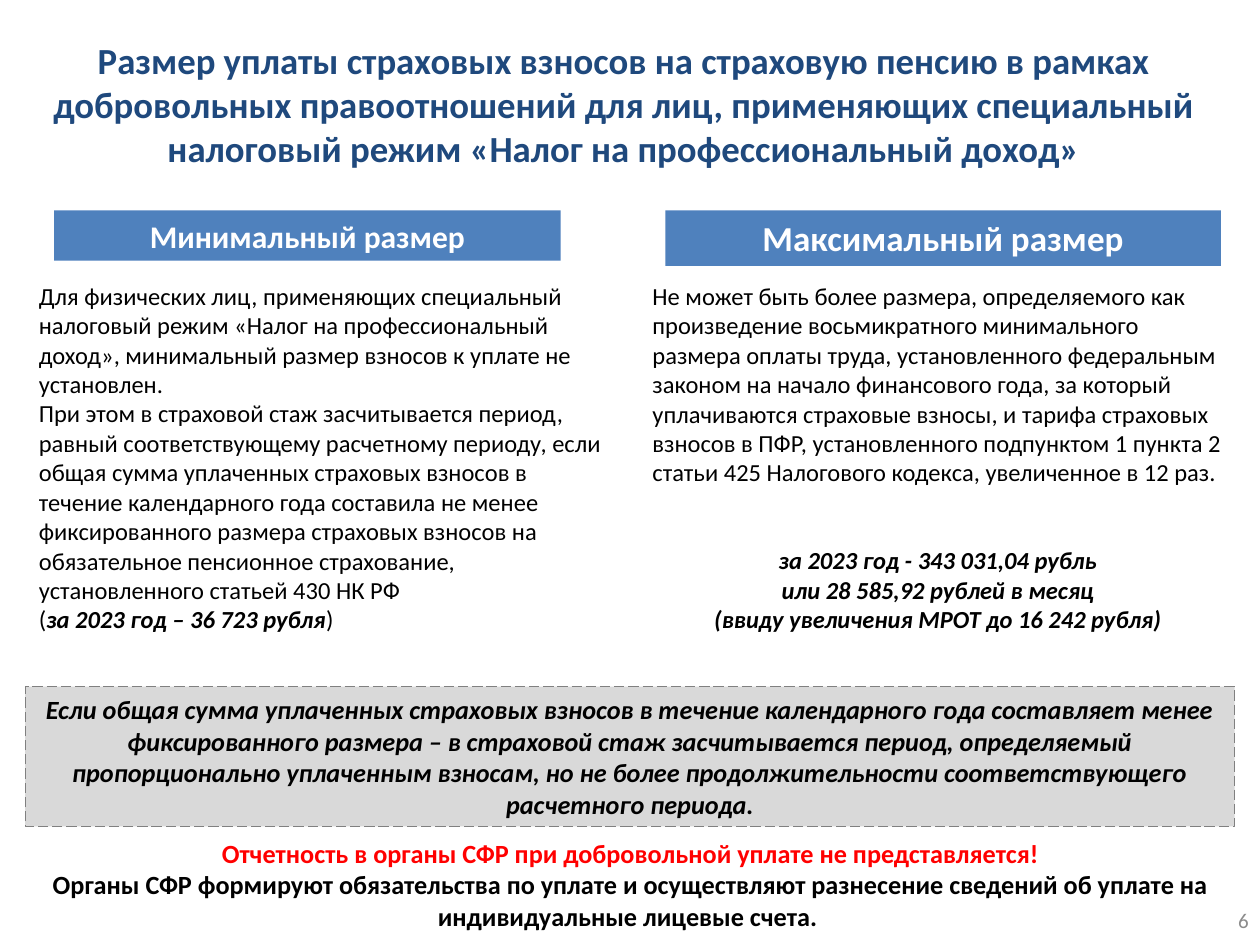
from dataclasses import dataclass
from typing import Optional

from pptx import Presentation
from pptx.dml.color import RGBColor
from pptx.enum import dml, shapes, text
from pptx import util as u

NAVY = RGBColor(0x1F, 0x49, 0x7D)
BLUE = RGBColor(0x4F, 0x81, 0xBD)
BLACK = RGBColor(0, 0, 0)
WHITE = RGBColor(0xFF, 0xFF, 0xFF)
RED = RGBColor(0xFF, 0, 0)
PALE = RGBColor(0xD9, 0xD9, 0xD9)
GREY = RGBColor(0x80, 0x80, 0x80)
DIM = RGBColor(0x8C, 0x8C, 0x8C)

WIDE, HIGH = u.Inches(10), u.Inches(7.5)
COLS, ROWS = 100, 75
FONT = "Calibri"
LEFT, MID, RIGHT = text.PP_ALIGN.LEFT, text.PP_ALIGN.CENTER, text.PP_ALIGN.RIGHT


@dataclass(frozen=True)
class Run:
    """A piece of text with one style."""
    words: str
    bold: bool = False
    slant: bool = False
    ink: RGBColor = BLACK


@dataclass(frozen=True)
class Box:
    """A block of text placed in grid columns and rows."""
    col: float
    row: float
    span: float
    tall: float
    size: float
    paras: list[list[Run]]
    align: text.PP_ALIGN = LEFT
    middle: bool = False
    grow: bool = True
    fill: Optional[RGBColor] = None
    edge: Optional[RGBColor] = None


def place(box: Box) -> tuple[int, int, int, int]:
    """Turn grid units into slide lengths."""
    across, down = WIDE / COLS, HIGH / ROWS
    return (round(box.col * across), round(box.row * down),
            round(box.span * across), round(box.tall * down))


def write(frame, box: Box) -> None:
    """Fill a text frame run by run."""
    frame.word_wrap = True
    fit = text.MSO_AUTO_SIZE
    frame.auto_size = fit.SHAPE_TO_FIT_TEXT if box.grow else fit.NONE
    anchor = text.MSO_ANCHOR
    frame.vertical_anchor = anchor.MIDDLE if box.middle else anchor.TOP
    for i, runs in enumerate(box.paras):
        para = frame.add_paragraph() if i else frame.paragraphs[0]
        para.alignment = box.align
        for item in runs:
            run = para.add_run()
            run.text = item.words
            font = run.font
            font.name, font.size = FONT, u.Pt(box.size)
            font.bold, font.italic = item.bold, item.slant
            font.color.rgb = item.ink


def draw(slide, box: Box) -> None:
    """Draw a filled panel or a plain text box."""
    if box.fill is None:
        shape = slide.shapes.add_textbox(*place(box))
    else:
        shape = slide.shapes.add_shape(shapes.MSO_SHAPE.RECTANGLE, *place(box))
        shape.shadow.inherit = False
        shape.fill.solid()
        shape.fill.fore_color.rgb = box.fill
        if box.edge is None:
            shape.line.fill.background()
        else:
            shape.line.color.rgb = box.edge
            shape.line.width = u.Pt(0.75)
            shape.line.dash_style = dml.MSO_LINE.LONG_DASH
    write(shape.text_frame, box)


def head(col: float, span: float, tall: float, size: float, words: str) -> Box:
    """Make a column heading."""
    return Box(col, 16.7, span, tall, size, [[Run(words, True, ink=WHITE)]], MID, fill=BLUE)


TITLE = Box(2.1, 1.4, 94.8, 13.7, 21, [[Run(
    "Размер уплаты страховых взносов на страховую пенсию в рамках добровольных "
    "правоотношений для лиц, применяющих специальный налоговый режим "
    "«Налог на профессиональный доход»", True, ink=NAVY)]], MID, True, False)

LEAST = Box(2.1, 21.8, 47.1, 29.3, 14, [
    [Run("Для физических лиц, применяющих специальный налоговый режим «Налог на "
         "профессиональный доход», минимальный размер взносов к уплате не установлен.")],
    [Run("При этом в страховой стаж засчитывается период, равный соответствующему "
         "расчетному периоду, если общая сумма уплаченных страховых взносов в течение "
         "календарного года составила не менее фиксированного размера страховых взносов "
         "на обязательное пенсионное страхование, установленного статьей 430 НК РФ")],
    [Run("("), Run("за 2023 год – 36 723 рубля", True, True), Run(")")],
])

MOST = Box(50.8, 21.8, 47.3, 17.5, 14, [[Run(
    "Не может быть более размера, определяемого как произведение восьмикратного "
    "минимального размера оплаты труда, установленного федеральным законом на начало "
    "финансового года, за который уплачиваются страховые взносы, и тарифа страховых "
    "взносов в ПФР, установленного подпунктом 1 пункта 2 статьи 425 Налогового кодекса, "
    "увеличенное в 12 раз.")]])

SUMS = Box(50.8, 42.8, 47.3, 8.1, 14, [[Run(line, True, True)] for line in (
    "за 2023 год - 343 031,04 рубль",
    "или 28 585,92 рублей в месяц",
    "(ввиду увеличения МРОТ до 16 242 рубля)")], MID)

CLOSE = Box(1.2, 65.9, 97.7, 8.6, 15, [
    [Run("Отчетность в органы СФР при добровольной уплате не представляется!",
         True, ink=RED)],
    [Run("Органы СФР формируют обязательства по уплате и осуществляют разнесение "
         "сведений об уплате на индивидуальные лицевые счета. ", True)],
], MID, True)

RULE = Box(2, 54.5, 96, 11.1, 15, [[Run(
    "Если общая сумма уплаченных страховых взносов в течение календарного года "
    "составляет менее фиксированного размера – в страховой стаж засчитывается период, "
    "определяемый пропорционально уплаченным взносам, но не более продолжительности "
    "соответствующего расчетного периода.", True, True)]], MID, True, fill=PALE, edge=GREY)

PAGE = Box(76.8, 71, 23.3, 4, 12, [[Run("6", ink=DIM)]], RIGHT, True, False)

BOXES = [
    TITLE, LEAST, MOST, SUMS,
    head(4.3, 40.2, 4, 18, "Минимальный размер"),
    head(52.8, 44.1, 4.4, 20, "Максимальный размер"),
    CLOSE, RULE, PAGE,
]


def main() -> None:
    """Build the slide on insurance contributions."""
    deck = Presentation()
    deck.slide_width, deck.slide_height = WIDE, HIGH
    slide = deck.slides.add_slide(deck.slide_layouts[6])
    for box in BOXES:
        draw(slide, box)
    deck.save("out.pptx")


if __name__ == "__main__":
    main()
